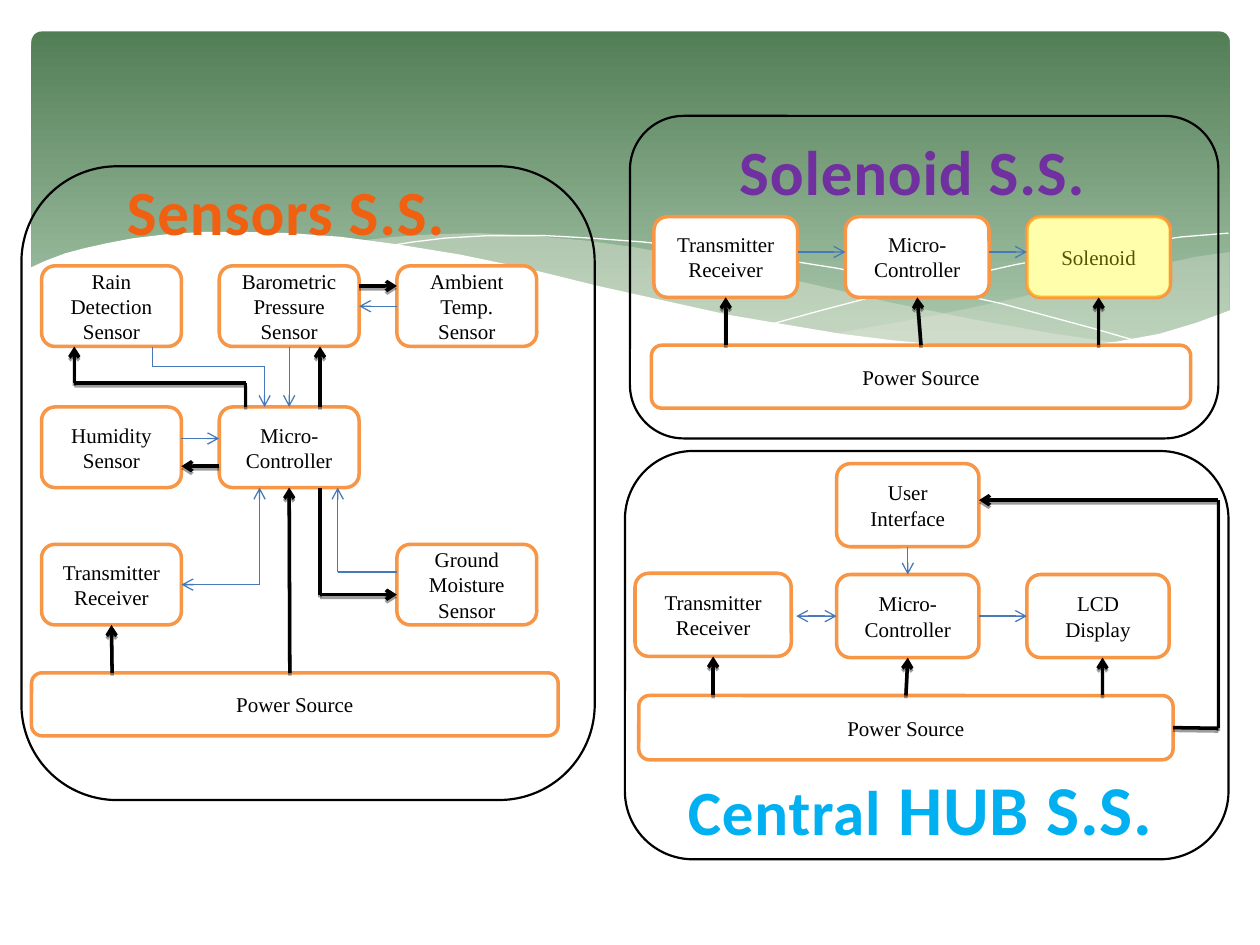
"""Build a block diagram slide of the sensor, solenoid and central hub subsystems."""
from lxml.etree import SubElement
from pptx import Presentation
from pptx.dml.color import RGBColor
from pptx.enum.shapes import MSO_CONNECTOR, MSO_SHAPE
from pptx.enum.text import MSO_ANCHOR, PP_ALIGN
from pptx.oxml.ns import qn
from pptx.util import Cm, Pt

WHITE = RGBColor(0xFF, 0xFF, 0xFF)
BLACK = RGBColor(0x00, 0x00, 0x00)
ORANGE = RGBColor(0xF7, 0x96, 0x46)
BLUE = RGBColor(0x45, 0x79, 0xB8)
YELLOW = RGBColor(0xFF, 0xFF, 0x00)
IVORY = RGBColor(0xEA, 0xEB, 0xDE)
DARK_GREEN = RGBColor(0x52, 0x7E, 0x56)
LIGHT_GREEN = RGBColor(0xAA, 0xC8, 0xAD)
SENSORS_COLOUR = RGBColor(0xF0, 0x60, 0x10)
HUB_COLOUR = RGBColor(0x00, 0xB0, 0xF0)
SOLENOID_COLOUR = RGBColor(0x70, 0x30, 0xA0)

CM_PER_INCH = 2.54
SNAP = 0.03

BANNER = (0.25, 0.25, 9.51, 2.7)
RIGHT_WAVE = [
    (9.76, 2), (9.48, 2.04), (9.21, 2.1), (8.61, 2.23), (8.05, 2.37), (7.53, 2.48),
    (7.06, 2.57), (6.61, 2.65), (6.91, 2.69), (7.19, 2.72), (7.57, 2.76), (8.03, 2.78),
    (8.54, 2.76), (8.89, 2.72), (9.21, 2.65), (9.49, 2.57), (9.76, 2.47)]
MIDDLE_WAVE = [
    (8.93, 2.73), (8.37, 2.65), (7.75, 2.54), (7.06, 2.4), (6.29, 2.22), (5.84, 2.11),
    (5.41, 2.03), (5.02, 1.96), (4.65, 1.91), (4.2, 1.87), (3.8, 1.85), (3.44, 1.86),
    (3.13, 1.88), (2.86, 1.91), (3.23, 1.96), (3.62, 2.03), (4.04, 2.11), (4.49, 2.22),
    (5.3, 2.4), (6.01, 2.55), (6.5, 2.64), (6.95, 2.7), (7.36, 2.75), (7.85, 2.78),
    (8.28, 2.78), (8.67, 2.76)]
WHITE_WAVE = [
    (9.77, 2.46), (9.5, 2.56), (9.2, 2.65), (8.87, 2.71), (8.5, 2.75), (8.09, 2.77),
    (7.61, 2.75), (7.08, 2.7), (6.68, 2.65), (6.26, 2.58), (5.79, 2.5), (5.29, 2.39),
    (4.75, 2.27), (4.18, 2.13), (3.65, 2.02), (3.16, 1.94), (2.71, 1.88), (2.3, 1.85),
    (1.93, 1.84), (1.61, 1.84), (1.32, 1.86), (1.06, 1.89), (0.85, 1.93), (0.67, 1.97),
    (0.52, 2.01), (0.36, 2.07), (0.23, 2.13), (0.23, 3.29), (9.77, 3.29)]
LONG_CURVE = [
    (3.09, 1.95), (3.28, 1.92), (3.53, 1.89), (3.87, 1.87), (4.33, 1.87), (4.69, 1.89),
    (5.1, 1.92), (5.56, 1.97), (6.08, 2.04), (6.65, 2.13), (7.27, 2.26), (7.95, 2.41),
    (8.69, 2.61), (9.07, 2.72)]
SHORT_CURVE = [
    (6.13, 2.57), (6.53, 2.46), (6.95, 2.35), (7.48, 2.23), (8.06, 2.1), (8.66, 1.99),
    (9.1, 1.92), (9.38, 1.88), (9.75, 1.85)]
WAVES = [(RIGHT_WAVE, IVORY, 29), (MIDDLE_WAVE, IVORY, 40), (LONG_CURVE, None, 0),
         (SHORT_CURVE, None, 0), (WHITE_WAVE, WHITE, 100)]

SENSOR_SIZE, HUB_SIZE, SOLENOID_SIZE = (1.11, 0.64), (1.13, 0.66), (1.14, 0.64)
BLOCKS = [
    ("Rain Detection\nSensor", (0.33, 2.11), SENSOR_SIZE),
    ("Barometric Pressure Sensor", (1.74, 2.11), SENSOR_SIZE),
    ("Ambient Temp.\nSensor", (3.15, 2.11), SENSOR_SIZE),
    ("Humidity\nSensor", (0.33, 3.23), SENSOR_SIZE),
    ("Micro-Controller", (1.74, 3.23), SENSOR_SIZE),
    ("Transmitter\nReceiver", (0.33, 4.32), SENSOR_SIZE),
    ("Ground Moisture\nSensor", (3.15, 4.32), SENSOR_SIZE),
    ("Power Source", (0.25, 5.34), (4.18, 0.5)),
    ("User Interface", (6.64, 3.68), HUB_SIZE),
    ("Transmitter\nReceiver", (5.04, 4.55), (1.24, 0.66)),
    ("Micro-Controller", (6.64, 4.56), HUB_SIZE),
    ("LCD Display", (8.15, 4.56), HUB_SIZE),
    ("Power Source", (5.07, 5.52), (4.24, 0.51)),
    ("Transmitter\nReceiver", (5.19, 1.72), SOLENOID_SIZE),
    ("Micro-Controller", (6.71, 1.72), SOLENOID_SIZE),
    ("Solenoid", (8.15, 1.72), SOLENOID_SIZE),
    ("Power Source", (5.17, 2.74), (4.28, 0.5)),
]
POWER_ROUTES = [
    [(0.89, 5.34), (0.89, 4.96)],
    [(2.3, 5.34), (2.3, 3.87)],
    [(1.74, 3.7), (1.44, 3.7)],
    [(2.54, 3.23), (2.54, 2.75)],
    [(2.54, 3.87), (2.54, 4.72), (3.15, 4.72)],
    [(1.95, 3.23), (1.95, 3.04), (0.59, 3.04), (0.59, 2.75)],
    [(2.85, 2.27), (3.15, 2.27)],
    [(9.31, 5.78), (9.67, 5.78), (9.67, 3.97), (7.77, 3.97)],
    [(7.2, 5.52), (7.2, 5.22)],
    [(5.66, 5.52), (5.66, 5.21)],
    [(8.75, 5.52), (8.75, 5.22)],
    [(5.76, 2.74), (5.76, 2.36)],
    [(7.28, 2.74), (7.28, 2.36)],
    [(8.72, 2.74), (8.72, 2.36)],
]
SIGNAL_ROUTES = [
    [(1.21, 2.75), (1.21, 2.91), (2.1, 2.91), (2.1, 3.23)],
    [(2.3, 2.75), (2.3, 3.23)],
    [(1.44, 3.48), (1.74, 3.48)],
    [(3.15, 4.54), (2.68, 4.54), (2.68, 3.87)],
    [(3.15, 2.46), (2.85, 2.46)],
    [(7.77, 4.89), (8.15, 4.89)],
    [(7.2, 4.34), (7.2, 4.56)],
    [(6.33, 2), (6.71, 2)],
    [(7.85, 2), (8.15, 2)],
]
TWO_WAY_ROUTES = [
    [(1.44, 4.64), (2.06, 4.64), (2.06, 3.87)],
    [(6.32, 4.89), (6.64, 4.89)],
]
TITLES = [
    ((0.89, 1.32, 2.76, 0.68), SENSORS_COLOUR, [("Sensors S.S.", 36)]),
    ((5.36, 6.03, 3.89, 0.74), HUB_COLOUR, [("Central", 36), (" HUB S.S.", 40)]),
    ((5.76, 1, 2.96, 0.68), SOLENOID_COLOUR, [("Solenoid S.S.", 36)]),
]
FRAMES = [(0.17, 1.32, 4.55, 5.03), (5, 0.92, 4.67, 2.56), (4.96, 3.58, 4.79, 3.24)]
HIGHLIGHT = (8.15, 1.72, 1.13, 0.64)


def lengths(values):
    return [Cm(value * CM_PER_INCH) for value in values]


def paint(shape, fill, line=None, width=0, opacity=100):
    shape.shadow.inherit = False
    if fill is None:
        shape.fill.background()
    else:
        shape.fill.solid()
        shape.fill.fore_color.rgb = fill
        if opacity < 100:
            colour = shape.fill._xPr.find(qn("a:solidFill"))[0]
            SubElement(colour, qn("a:alpha"), val=str(opacity * 1000))
    if line is None:
        shape.line.fill.background()
    else:
        shape.line.color.rgb = line
        shape.line.width = Pt(width)


def add_span(para, text, size, font, colour):
    span = para.add_run()
    span.text = text
    span.font.size = Pt(size)
    span.font.name = font
    span.font.color.rgb = colour
    return span


def add_round_box(page, place):
    return page.shapes.add_shape(MSO_SHAPE.ROUNDED_RECTANGLE, *lengths(place))


def add_wave(page, points, fill, opacity):
    corners = [lengths(point) for point in points]
    builder = page.shapes.build_freeform(*corners[0], scale=1.0)
    builder.add_line_segments(corners[1:], close=fill is not None)
    paint(builder.convert_to_shape(), fill, WHITE if fill is None else None, 0, opacity)


def add_block(page, text, corner, size):
    box = add_round_box(page, corner + size)
    paint(box, WHITE, ORANGE, 2)
    box.text_frame.word_wrap = True
    box.text_frame.vertical_anchor = MSO_ANCHOR.MIDDLE
    para = box.text_frame.paragraphs[0]
    para.alignment = PP_ALIGN.CENTER
    for index, words in enumerate(text.split("\n")):
        if index:
            para.add_line_break()
        add_span(para, words, 12, "Times New Roman", BLACK)
    return box


def find_site(point, boxes):
    x, y = lengths(point)
    reach = Cm(SNAP * CM_PER_INCH)
    for box in boxes:
        middle_x, middle_y = box.left + box.width // 2, box.top + box.height // 2
        sites = [(middle_x, box.top), (box.left, middle_y),
                 (middle_x, box.top + box.height), (box.left + box.width, middle_y)]
        for site, (site_x, site_y) in enumerate(sites):
            if abs(site_x - x) <= reach and abs(site_y - y) <= reach:
                return box, site
    return None


def add_route(page, boxes, points, colour, width, shadowed=False, two_way=False):
    last = len(points) - 2
    for index, (start, end) in enumerate(zip(points, points[1:])):
        line = page.shapes.add_connector(MSO_CONNECTOR.STRAIGHT, *lengths(start + end))
        line.line.color.rgb = colour
        line.line.width = Pt(width)
        outline = line.line._get_or_add_ln()
        if two_way and index == 0:
            SubElement(outline, qn("a:headEnd"), type="arrow")
        if index == last:
            SubElement(outline, qn("a:tailEnd"), type="arrow")
        effects = SubElement(line._element.spPr, qn("a:effectLst"))
        if shadowed:
            shadow = SubElement(effects, qn("a:outerShdw"), blurRad="0", dist=str(Pt(1.6)),
                                dir="5400000", rotWithShape="0")
            shade = SubElement(shadow, qn("a:srgbClr"), val=str(BLACK))
            SubElement(shade, qn("a:alpha"), val="38000")
        for point, connect in ((start, line.begin_connect), (end, line.end_connect)):
            joint = find_site(point, boxes)
            if joint:
                connect(*joint)


def add_title(page, place, colour, spans):
    box = page.shapes.add_textbox(*lengths(place))
    box.text_frame.word_wrap = False
    para = box.text_frame.paragraphs[0]
    para.alignment = PP_ALIGN.CENTER
    for text, size in spans:
        span = add_span(para, text, size, "Calibri", colour)
        span.font.bold = True
        span.font._element.set("spc", "50")


def main():
    deck = Presentation()
    deck.slide_width, deck.slide_height = lengths((10, 7.5))
    page = deck.slides.add_slide(deck.slide_layouts[6])

    banner = add_round_box(page, BANNER)
    banner.adjustments[0] = 0.03
    paint(banner, WHITE)
    banner.fill.gradient()
    banner.fill.gradient_angle = 270
    for stop, colour, position in zip(banner.fill.gradient_stops,
                                      (DARK_GREEN, LIGHT_GREEN), (0, 0.9)):
        stop.color.rgb = colour
        stop.position = position
    for wave in WAVES:
        add_wave(page, *wave)

    boxes = [add_block(page, *block) for block in BLOCKS]
    for route in POWER_ROUTES:
        add_route(page, boxes, route, BLACK, 2, shadowed=True)
    for route in SIGNAL_ROUTES:
        add_route(page, boxes, route, BLUE, 0.75)
    for route in TWO_WAY_ROUTES:
        add_route(page, boxes, route, BLUE, 0.75, two_way=True)
    for title in TITLES:
        add_title(page, *title)
    for frame in FRAMES:
        paint(add_round_box(page, frame), None, BLACK, 1.25)
    paint(add_round_box(page, HIGHLIGHT), YELLOW, opacity=33)
    deck.save("out.pptx")


if __name__ == "__main__":
    main()
